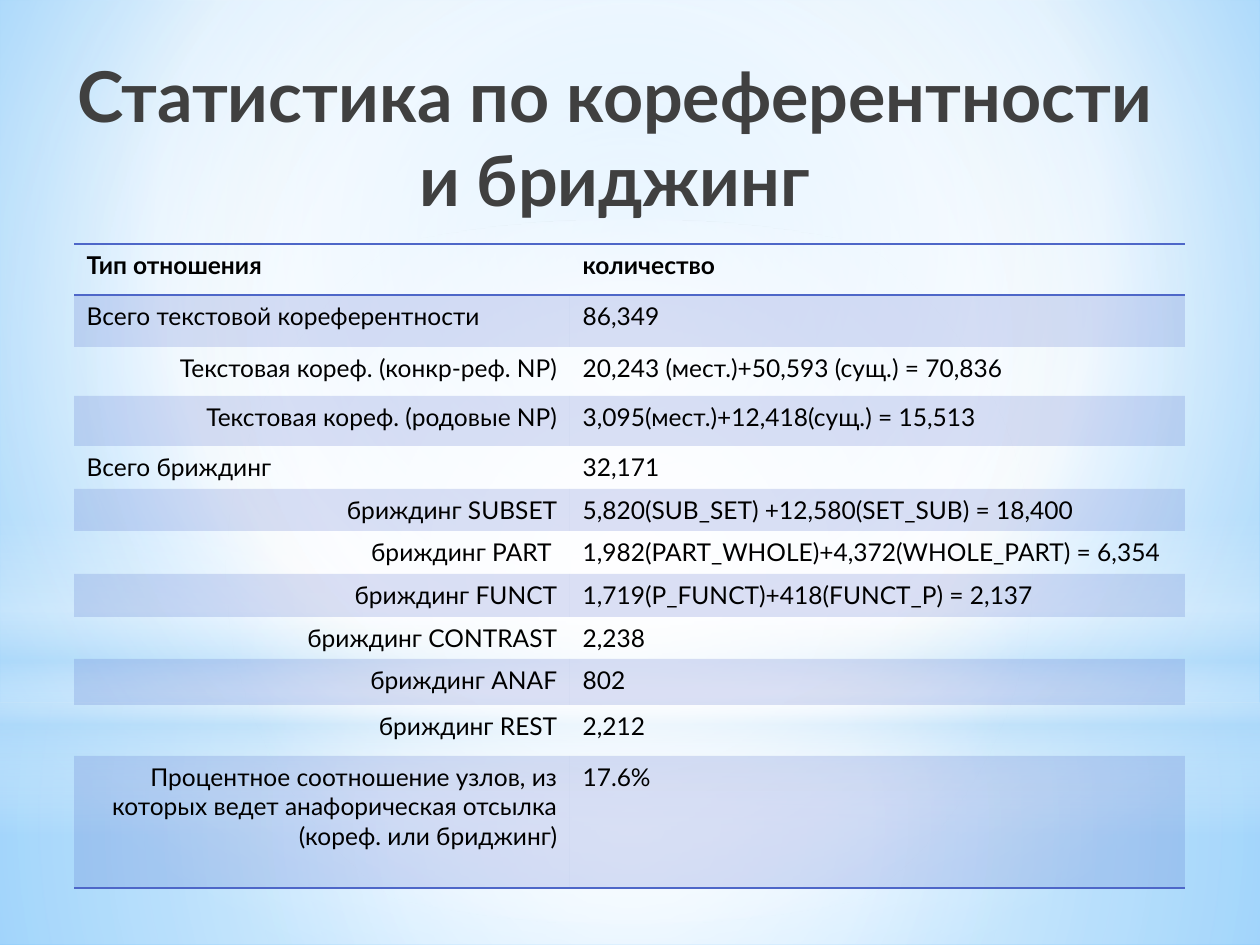
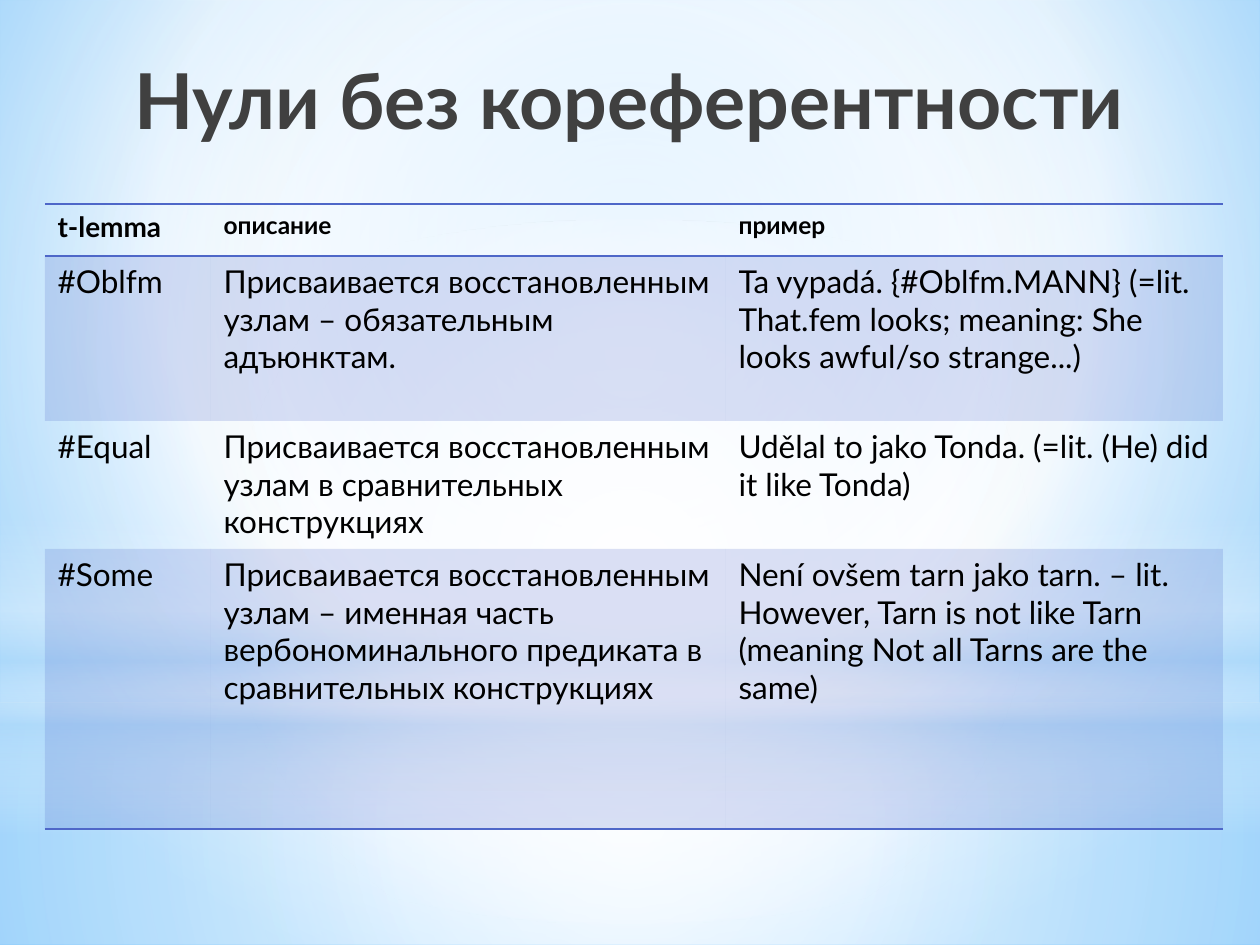
import dataclasses

import pptx
import pptx.dml.color
import pptx.enum.shapes
import pptx.enum.text
import pptx.oxml
import pptx.oxml.ns
import pptx.util


@dataclasses.dataclass(frozen=True)
class Theme:
    font: str = "Lato"
    ink: str = "000000"
    title: str = "404040"
    accent: str = "4E67C8"
    white: str = "FFFFFF"
    haze: str = "B4DCFA"
    sky: str = "9ED5FF"
    deep_sky: str = "5BB9FF"
    band_alpha: int = 20
    rule_pt: int = 1
    title_pt: int = 44
    long_title_pt: int = 40
    small_pt: int = 14
    lemma_pt: int = 16
    body_pt: int = 18


THEME = Theme()
PAGE_WIDTH, PAGE_HEIGHT = 1260, 945
EMU_PER_PX = 914400 / 126
NO_STYLE = "{2D5ABB26-0587-4C30-8999-92F81FD0307C}"
RIGHT = pptx.enum.text.PP_ALIGN.RIGHT
LEFT = pptx.enum.text.PP_ALIGN.LEFT
CENTER = pptx.enum.text.PP_ALIGN.CENTER
CENTER_FOCUS = (50, 50, 50, 50)

STATISTICS = [
    ("Тип отношения", "количество"),
    ("Всего текстовой кореферентности", "86,349"),
    ("Текстовая кореф. (конкр-реф. NP)", "20,243 (мест.)+50,593 (сущ.) = 70,836"),
    ("Текстовая кореф. (родовые NP)", "3,095(мест.)+12,418(сущ.) = 15,513"),
    ("Всего бриждинг", "32,171"),
    ("бриждинг SUBSET", "5,820(SUB_SET) +12,580(SET_SUB) = 18,400"),
    ("бриждинг PART ", "1,982(PART_WHOLE)+4,372(WHOLE_PART) = 6,354"),
    ("бриждинг FUNCT", "1,719(P_FUNCT)+418(FUNCT_P) = 2,137"),
    ("бриждинг CONTRAST", "2,238"),
    ("бриждинг ANAF", "802"),
    ("бриждинг REST", "2,212"),
    ("Процентное соотношение узлов, из которых ведет анафорическая отсылка "
     "(кореф. или бриджинг)", "17.6%"),
]
TOTAL_ROWS = {0, 1, 4}

ZEROS = [
    ("t-lemma", "описание", "пример"),
    ("#Oblfm",
     "Присваивается восстановленным узлам – обязательным адъюнктам.",
     "Ta vypadá. {#Oblfm.MANN} (=lit. That.fem looks; meaning: She looks "
     "awful/so strange...)"),
    ("#Equal",
     "Присваивается восстановленным узлам в сравнительных конструкциях",
     "Udělal to jako Tonda. (=lit. (He) did it like Tonda)"),
    ("#Some",
     "Присваивается восстановленным узлам – именная часть "
     "вербономинального предиката в сравнительных конструкциях",
     "Není ovšem tarn jako tarn. – lit. However, Tarn is not like Tarn "
     "(meaning Not all Tarns are the same)"),
]


def px(length):
    return pptx.util.Emu(round(length * EMU_PER_PX))


def apply(target, values):
    for name, value in values.items():
        setattr(target, name, value)


def rgb(color):
    return pptx.dml.color.RGBColor.from_string(color)


def xml(markup):
    tag, rest = markup[1:].split(" ", 1)
    return pptx.oxml.parse_xml(f"<{tag} {pptx.oxml.ns.nsdecls('a')} {rest}")


def set_gradient(holder, stops, focus=None):
    marks = "".join(
        f'<a:gs pos="{place * 1000}"><a:srgbClr val="{color}">'
        f'<a:alpha val="{alpha * 1000}"/></a:srgbClr></a:gs>'
        for place, color, alpha in stops)
    direction = '<a:lin ang="5400000" scaled="0"/>'
    if focus:
        edges = " ".join(f'{side}="{share * 1000}"' for side, share in zip("ltrb", focus))
        direction = f'<a:path path="circle"><a:fillToRect {edges}/></a:path>'
    gradient = xml(f'<a:gradFill rotWithShape="1"><a:gsLst>{marks}</a:gsLst>'
                   f'{direction}</a:gradFill>')
    solid = holder.find(pptx.oxml.ns.qn("a:solidFill"))
    holder.replace(solid, gradient)


def add_glow(page, kind, top, height, stops, focus=CENTER_FOCUS):
    box = page.shapes.add_shape(kind, 0, px(top), px(PAGE_WIDTH), px(height))
    box.shadow.inherit = False
    box.line.fill.background()
    box.fill.solid()
    set_gradient(box._element.spPr, stops, focus)
    return box


def build_backdrop(master, page):
    white, haze = THEME.white, THEME.haze
    master.background.fill.solid()
    holder = master._element.find(".//" + pptx.oxml.ns.qn("p:bgPr"))
    set_gradient(holder, [(0, THEME.sky, 100), (60, white, 100), (100, THEME.deep_sky, 100)],
                 (20, 10, 20, 60))
    kinds = pptx.enum.shapes.MSO_SHAPE
    glows = [
        add_glow(page, kinds.RECTANGLE, 703, 242,
                 [(0, white, 91), (37, white, 76), (100, haze, 79)]),
        add_glow(page, kinds.RECTANGLE, 0, 703,
                 [(0, white, 89), (48, white, 62), (100, haze, 79)]),
        add_glow(page, kinds.RECTANGLE, 519, 315,
                 [(0, white, 0), (29, white, 30), (45, haze, 40),
                  (55, white, 26), (65, haze, 60), (100, white, 0)], None),
        add_glow(page, kinds.OVAL, 220, 703, [(0, white, 100), (56, white, 0)]),
    ]
    for number, box in enumerate(glows, start=20):
        box._element.nvSpPr.cNvPr.set("id", str(number))
        master.shapes._spTree.append(box._element)


def write(frame, text, size, color, bold=False, align=LEFT):
    para = frame.paragraphs[0]
    para.alignment = align
    span = para.add_run()
    span.text = text
    apply(span.font, {"name": THEME.font, "size": pptx.util.Pt(size), "bold": bold})
    span.font.color.rgb = rgb(color)


def add_title(page, text, left, width, size):
    box = page.shapes.add_textbox(px(left), px(45), px(width), px(168))
    apply(box.text_frame, {
        "word_wrap": True,
        "vertical_anchor": pptx.enum.text.MSO_ANCHOR.TOP,
        "margin_left": 0,
        "margin_right": 0,
        "margin_top": px(8),
        "margin_bottom": 0,
    })
    write(box.text_frame, text, size, THEME.title, True, CENTER)


def paint_cell(cell, banded, sides):
    if banded:
        cell.fill.solid()
        cell.fill.fore_color.rgb = rgb(THEME.accent)
        properties = cell._tc.tcPr
        color = properties.find(".//" + pptx.oxml.ns.qn("a:srgbClr"))
        color.append(xml(f'<a:alpha val="{THEME.band_alpha * 1000}"/>'))
    else:
        cell.fill.background()
    for place, side in enumerate(sides):
        cell._tc.tcPr.insert(place, xml(
            f'<a:ln{side} w="{pptx.util.Pt(THEME.rule_pt)}"><a:solidFill>'
            f'<a:srgbClr val="{THEME.accent}"/></a:solidFill></a:ln{side}>'))


def add_banded_table(page, left, top, widths, heights, rows, header_sizes, body_size,
                     indented=()):
    frame = page.shapes.add_table(len(rows), len(widths), px(left), px(top),
                                  px(sum(widths)), px(sum(heights)))
    table = frame.table
    table.horz_banding = False
    table._tbl.tblPr.find(pptx.oxml.ns.qn("a:tableStyleId")).text = NO_STYLE
    for column, width in zip(table.columns, widths):
        column.width = px(width)
    for row, height in zip(table.rows, heights):
        row.height = px(height)
    for row_index, texts in enumerate(rows):
        header = row_index == 0
        sides = "TB" if header else "B" if row_index == len(rows) - 1 else ""
        for column_index, text in enumerate(texts):
            cell = table.cell(row_index, column_index)
            size = header_sizes[column_index] if header else body_size
            align = RIGHT if column_index == 0 and row_index in indented else LEFT
            write(cell.text_frame, text, size, THEME.ink, header, align)
            paint_cell(cell, row_index % 2 == 1, sides)


def build_statistics(page):
    add_title(page, "Статистика по кореферентности и бриджинг", 64, 1101,
              THEME.long_title_pt)
    add_banded_table(page, 74, 244, [496, 615],
                     [51, 52, 49, 50, 43, 42, 43, 43, 42, 46, 51, 132],
                     STATISTICS, [THEME.small_pt] * 2, THEME.small_pt,
                     set(range(len(STATISTICS))) - TOTAL_ROWS)


def build_zeros(page):
    add_title(page, "Нули без кореферентности", 44, 1171, THEME.title_pt)
    add_banded_table(page, 45, 204, [166, 515, 497], [52, 165, 128, 280], ZEROS,
                     [THEME.lemma_pt, THEME.small_pt, THEME.small_pt], THEME.body_pt)


def main():
    deck = pptx.Presentation()
    apply(deck, {"slide_width": px(PAGE_WIDTH), "slide_height": px(PAGE_HEIGHT)})
    pages = [deck.slides.add_slide(deck.slide_layouts[6]) for _ in range(2)]
    build_backdrop(deck.slide_master, pages[0])
    build_statistics(pages[0])
    build_zeros(pages[1])
    deck.save("out.pptx")


if __name__ == "__main__":
    main()
